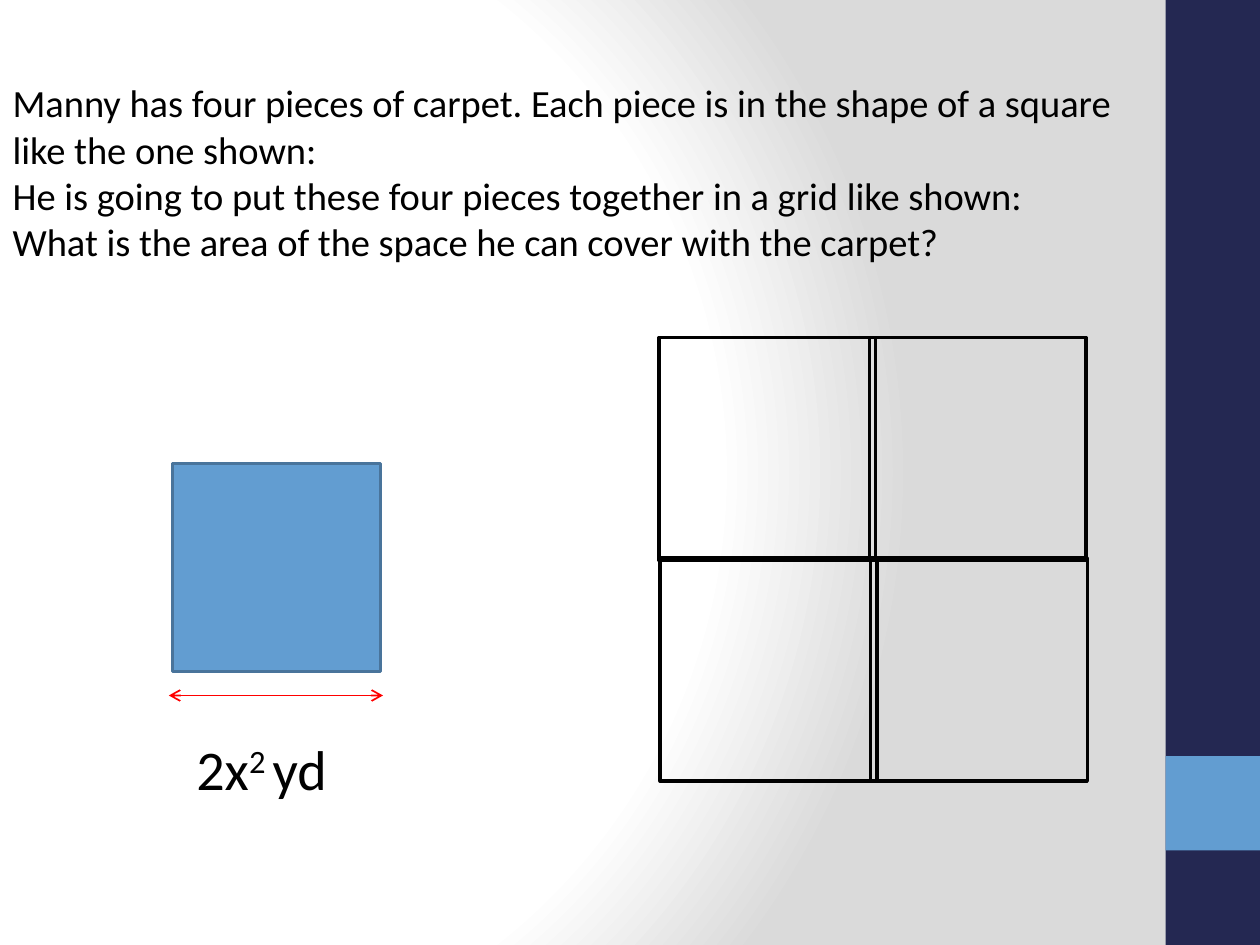
from lxml import etree
from pptx import Presentation
from pptx.dml.color import RGBColor
from pptx.enum.shapes import MSO_CONNECTOR, MSO_SHAPE
from pptx.enum.text import MSO_ANCHOR, MSO_AUTO_SIZE, PP_ALIGN
from pptx.oxml import parse_xml
from pptx.oxml.ns import nsdecls, qn
from pptx.util import Inches, Pt

COLORS = {
    "white": "FFFFFF",
    "gray": "DADADA",
    "navy": "242852",
    "blue": "629DD1",
    "blue_edge": "49749B",
    "black": "000000",
    "red": "FF0000",
}
PROBLEM = [
    "Manny has four pieces of carpet. Each piece is in the shape of a square like the one shown:",
    "He is going to put these four pieces together in a grid like shown:",
    "What is the area of the space he can cover with the carpet?",
]


def rgb(name):
    return RGBColor.from_string(COLORS[name])


def set_background(slide):
    """Fade from white at the left to gray at the right along a circular path."""
    stops = "".join(
        f'<a:gs pos="{position * 1000}"><a:srgbClr val="{COLORS[name]}"/></a:gs>'
        for position, name in ((0, "white"), (75, "white"), (100, "gray"))
    )
    gradient = parse_xml(
        f'<a:gradFill {nsdecls("a")} rotWithShape="1"><a:gsLst>{stops}</a:gsLst>'
        '<a:path path="circle"><a:fillToRect l="20000" t="50000" r="100000" b="50000"/>'
        "</a:path></a:gradFill>"
    )
    slide.background.fill.solid()
    solid = slide.element.find(".//" + qn("p:bgPr")).find(qn("a:solidFill"))
    solid.getparent().replace(solid, gradient)


def add_rect(shapes, left, top, width, height, fill=None, line=None):
    rect = shapes.add_shape(
        MSO_SHAPE.RECTANGLE, Inches(left), Inches(top), Inches(width), Inches(height)
    )
    rect.shadow.inherit = False
    if fill:
        rect.fill.solid()
        rect.fill.fore_color.rgb = rgb(fill)
    else:
        rect.fill.background()
    if line:
        rect.line.color.rgb = rgb(line)
        rect.line.width = Pt(2)
    else:
        rect.line.fill.background()


def add_run(paragraph, text, size, color="black", raised=False):
    run = paragraph.add_run()
    run.text = text
    run.font.name = "Calibri"
    run.font.size = Pt(size)
    run.font.color.rgb = rgb(color)
    if raised:
        run.font._element.set("baseline", "30000")


def add_problem(body):
    body.left, body.top = Inches(0), Inches(0.63)
    body.width, body.height = Inches(9.31), Inches(1.63)
    frame = body.text_frame
    frame.word_wrap = True
    frame.auto_size = MSO_AUTO_SIZE.NONE
    frame.vertical_anchor = MSO_ANCHOR.TOP
    frame.margin_top = 0
    for index, sentence in enumerate(PROBLEM):
        paragraph = frame.add_paragraph() if index else frame.paragraphs[0]
        paragraph.alignment = PP_ALIGN.LEFT
        paragraph.space_before = Pt(0)
        properties = paragraph._p.get_or_add_pPr()
        properties.set("marL", "0")
        properties.set("indent", "0")
        etree.SubElement(properties, qn("a:buNone"))
        add_run(paragraph, sentence, size=22)


def add_carpet_grid(slide):
    pieces = slide.shapes.add_group_shape().shapes
    for row in range(2):
        for column in range(2):
            add_rect(pieces, 5.23 + 1.67 * column + 0.01 * row, 2.68 + 1.75 * row,
                     1.72, 1.77, line="black")


def add_double_arrow(shapes, left, right, y):
    arrow = shapes.add_connector(
        MSO_CONNECTOR.STRAIGHT, Inches(left), Inches(y), Inches(right), Inches(y)
    )
    arrow.line.color.rgb = rgb("red")
    arrow.line.width = Pt(1)
    outline = arrow.line._get_or_add_ln()
    for end in ("a:headEnd", "a:tailEnd"):
        etree.SubElement(outline, qn(end), type="arrow")
    etree.SubElement(arrow._element.spPr, qn("a:effectLst"))


def add_sample_piece(slide):
    parts = slide.shapes.add_group_shape().shapes
    side_label = parts.add_textbox(Inches(1.46), Inches(5.7), Inches(3.12), Inches(1.48))
    side_label.text_frame.word_wrap = True
    paragraph = side_label.text_frame.paragraphs[0]
    paragraph.line_spacing = 1.15
    paragraph.space_after = Pt(10)
    for text, raised in (("2x", False), ("2 ", True), ("yd", False)):
        add_run(paragraph, text, size=32, raised=raised)
    add_rect(parts, 1.37, 3.68, 1.65, 1.65, fill="blue", line="blue_edge")
    add_double_arrow(parts, 1.34, 3.04, 5.52)


def main():
    deck = Presentation()
    deck.slide_width, deck.slide_height = Inches(10), Inches(7.5)
    slide = deck.slides.add_slide(deck.slide_layouts[1])
    title = slide.shapes.title._element
    title.getparent().remove(title)
    set_background(slide)
    add_rect(slide.shapes, 9.25, 0, 0.75, 7.5, fill="navy")
    add_rect(slide.shapes, 9.25, 6, 0.75, 0.75, fill="blue")
    add_problem(slide.placeholders[1])
    add_carpet_grid(slide)
    add_sample_piece(slide)
    deck.save("out.pptx")


if __name__ == "__main__":
    main()
